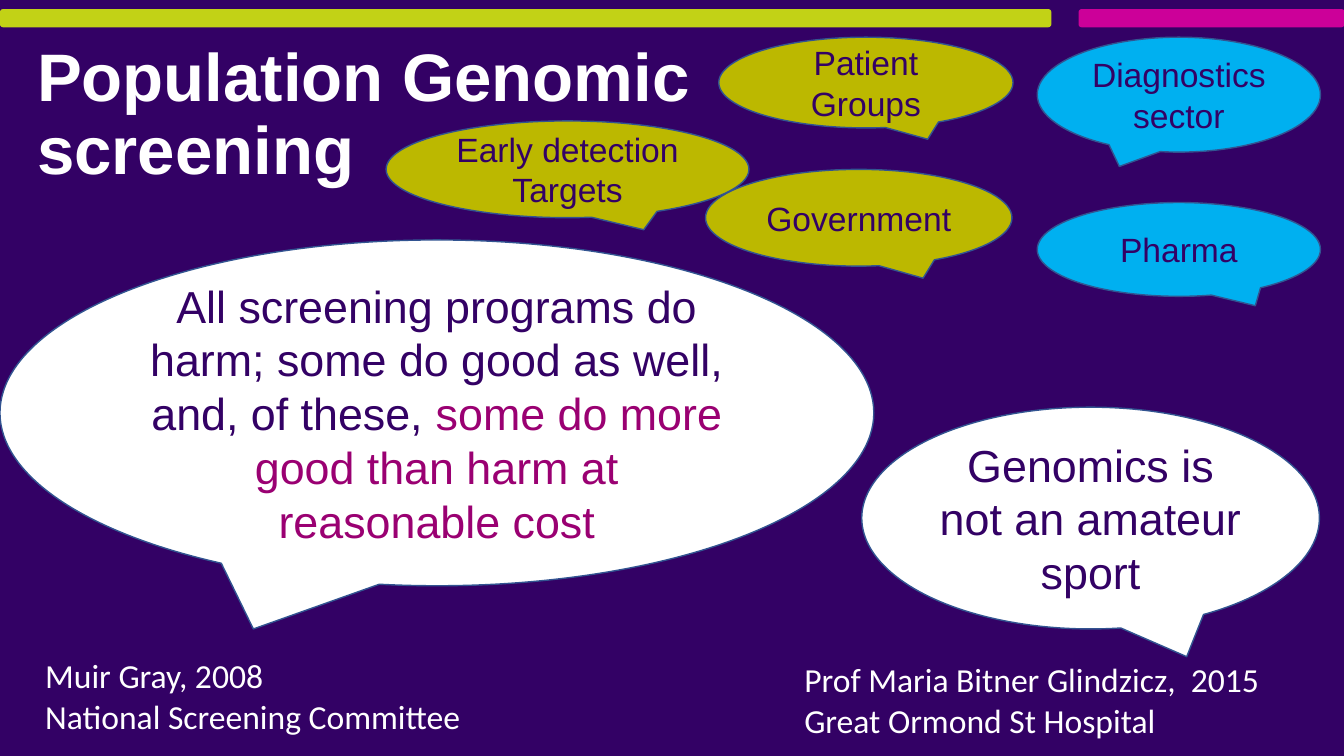
from pptx import Presentation
from pptx.dml.color import RGBColor
from pptx.enum import shapes, text
from pptx.util import Pt

PURPLE, WHITE, OLIVE, BLUE = "330165", "FFFFFF", "BCB800", "00B0F0"
LIME, PINK, PLUM, OUTLINE = "C2D216", "CC0099", "9A0072", "325491"

# Tail tips, as fractions of the bubble size from its centre
TAIL_LEFT, TAIL_RIGHT, TAIL_FAR_RIGHT = (-0.21, 0.625), (0.21, 0.625), (0.27, 0.6)

# (left, top, width, height) in points
BARS = [((0, 6.5, 751, 13), LIME), ((770.4, 6.5, 190, 13), PINK)]

# box, fill, tail, text size, paragraphs of (words, colour) spans
BUBBLES = [
    ((0, 171.4, 624.2, 247), WHITE, TAIL_LEFT, 32,
     [[("All screening programs do harm; some do good as well, and, of these, ", PURPLE),
       ("some do more good than harm at reasonable cost", PLUM)]]),
    ((615.6, 290.9, 326.9, 158.4), WHITE, TAIL_RIGHT, 32,
     [[("Genomics is not an amateur sport", PURPLE)]]),
    ((513.4, 26.6, 210.2, 64.8), OLIVE, TAIL_RIGHT, 24, [[("Patient Groups", PURPLE)]]),
    ((504, 121, 218.9, 69.1), OLIVE, TAIL_RIGHT, 24, [[("Government", PURPLE)]]),
    ((740.9, 26.6, 202.3, 82.1), BLUE, TAIL_LEFT, 24,
     [[("Diagnostics", PURPLE)], [("sector", PURPLE)]]),
    ((740.9, 144.7, 202.3, 67), BLUE, TAIL_FAR_RIGHT, 24, [[("Pharma", PURPLE)]]),
    ((275.8, 86.4, 259.2, 69.1), OLIVE, TAIL_RIGHT, 24,
     [[("Early detection Targets", PURPLE)]]),
]

TITLE = ((19.4, 52.6, 498.2, 60.5), [[("Population Genomic screening", WHITE)]])
CREDITS = [
    ((25.2, 464.4, 326.9, 65.5),
     [[("Muir Gray, 2008", WHITE)], [("National Screening Committee", WHITE)]]),
    ((567.4, 467.3, 339.8, 65.5),
     [[("Prof Maria Bitner Glindzicz,  2015", WHITE)], [("Great Ormond St Hospital", WHITE)]]),
]


def colour(value):
    return RGBColor.from_string(value)


def write(shape, paragraphs, para_format, font, anchor=text.MSO_ANCHOR.MIDDLE):
    frame = shape.text_frame
    frame.word_wrap = True
    frame.vertical_anchor = anchor
    for index, spans in enumerate(paragraphs):
        para = frame.add_paragraph() if index else frame.paragraphs[0]
        for name, value in para_format.items():
            setattr(para, name, value)
        for words, shade in spans:
            span = para.add_run()
            span.text = words
            for name, value in font.items():
                setattr(span.font, name, value)
            span.font.color.rgb = colour(shade)


def add_filled(page, kind, box, fill, line=None):
    shape = page.shapes.add_shape(kind, *map(Pt, box))
    shape.shadow.inherit = False
    shape.fill.solid()
    shape.fill.fore_color.rgb = colour(fill)
    if line:
        shape.line.color.rgb = colour(line)
        shape.line.width = Pt(1)
    else:
        shape.line.fill.background()
    return shape


def add_bubble(page, box, fill, tail, size, paragraphs):
    bubble = add_filled(page, shapes.MSO_SHAPE.OVAL_CALLOUT, box, fill, OUTLINE)
    for index, offset in enumerate(tail):
        bubble.adjustments[index] = offset
    write(bubble, paragraphs, {"alignment": text.PP_ALIGN.CENTER},
          {"name": "Arial", "size": Pt(size)})


def main():
    deck = Presentation()
    deck.slide_width, deck.slide_height = Pt(960), Pt(540)
    page = deck.slides.add_slide(deck.slide_layouts[6])
    page.background.fill.solid()
    page.background.fill.fore_color.rgb = colour(PURPLE)

    for box, fill in BARS:
        add_filled(page, shapes.MSO_SHAPE.ROUNDED_RECTANGLE, box, fill)

    box, paragraphs = TITLE
    write(page.shapes.add_textbox(*map(Pt, box)), paragraphs, {"line_spacing": 0.9},
          {"name": "Arial", "size": Pt(48), "bold": True})

    for bubble in BUBBLES:
        add_bubble(page, *bubble)

    for box, paragraphs in CREDITS:
        write(page.shapes.add_textbox(*map(Pt, box)), paragraphs, {},
              {"name": "Calibri", "size": Pt(24)}, text.MSO_ANCHOR.TOP)

    deck.save("out.pptx")


if __name__ == "__main__":
    main()
